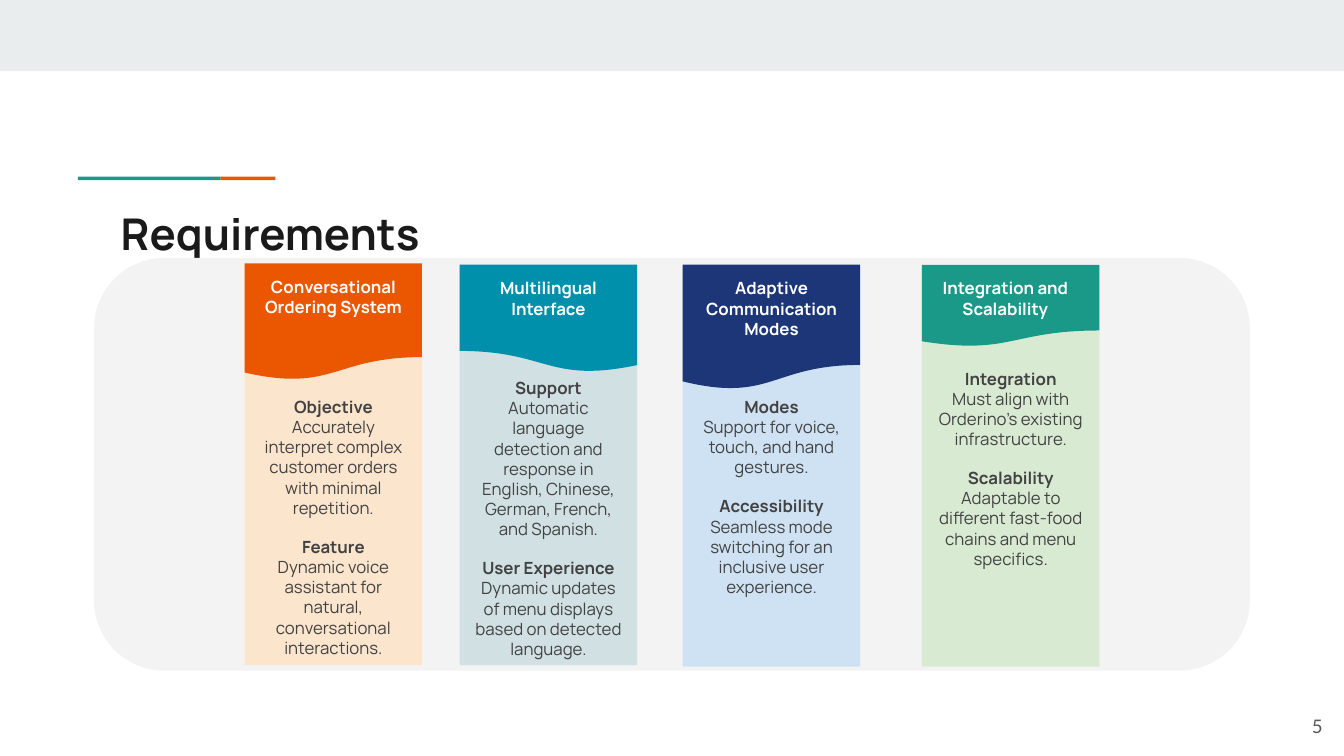
"""Build the Requirements slide: four wave-topped columns on a rounded panel."""
from dataclasses import dataclass

from pptx import Presentation
from pptx.dml.color import RGBColor
from pptx.enum.shapes import MSO_SHAPE
from pptx.enum.text import MSO_ANCHOR, PP_ALIGN
from pptx.util import Inches, Pt

RECTANGLE = MSO_SHAPE.RECTANGLE
ROUNDED = MSO_SHAPE.ROUNDED_RECTANGLE
WAVE = MSO_SHAPE.FLOWCHART_DOCUMENT
LEFT, CENTER, RIGHT = PP_ALIGN.LEFT, PP_ALIGN.CENTER, PP_ALIGN.RIGHT
TOP, MIDDLE = MSO_ANCHOR.TOP, MSO_ANCHOR.MIDDLE

GRID_COLUMNS, GRID_ROWS = 100, 56.25
UNIT = Inches(10) / GRID_COLUMNS
CARD_WIDTH, CARD_HEIGHT = 13.2, 29.8
LABEL_HEIGHT = 6.6
SECTION_GAP = 10

COLORS = {
    "banner": "E9EDEE", "panel": "F3F3F3", "title": "1A1A1A",
    "body": "424242", "number": "595959", "white": "FFFFFF",
    "orange": "EB5600", "peach": "FCE5CD",
    "cyan": "0090AC", "mist": "D0E0E3",
    "navy": "1C3678", "sky": "CFE2F3",
    "teal": "1A9988", "mint": "D9EAD3",
}


@dataclass(frozen=True)
class Area:
    """A rectangle in grid columns and rows."""
    left: float
    top: float
    width: float
    height: float

    def lengths(self) -> list[int]:
        """Return the four lengths in slide units."""
        return [round(UNIT * cells)
                for cells in (self.left, self.top, self.width, self.height)]


@dataclass(frozen=True)
class Style:
    """The look of a paragraph."""
    color: str
    size: float = 9
    bold: bool = False
    font: str = "Manrope"
    align: PP_ALIGN = CENTER


@dataclass(frozen=True)
class Section:
    """A heading with the sentence below it."""
    heading: str
    sentence: str


@dataclass(frozen=True)
class Card:
    """A requirement column with its wave header and sections."""
    label: str
    left: float
    top: float
    wave_top: float
    wave_height: float
    body_top: float
    dark: str
    light: str
    sections: tuple[Section, ...]
    label_width: float = CARD_WIDTH
    flipped: bool = False


HEADING = Style("body", bold=True)
SENTENCE = Style("body")
LABEL = Style("white", bold=True)
TITLE = Style("title", 23.4, True, align=LEFT)
NUMBER = Style("number", 10, font="Lato", align=RIGHT)

CARDS = (
    Card("Conversational Ordering System", 18.2, 19.7, 19.6, 8.7, 28.5,
         "orange", "peach", (
             Section("Objective", "Accurately interpret complex customer "
                     "orders with minimal repetition."),
             Section("Feature", "Dynamic voice assistant for natural, "
                     "conversational interactions."))),
    Card("Multilingual Interface", 34.2, 19.7, 19.7, 8, 27.1,
         "cyan", "mist", (
             Section("Support", "Automatic language detection and response "
                     "in English, Chinese, German, French, and Spanish."),
             Section("User Experience", "Dynamic updates of menu displays "
                     "based on detected language.")),
         flipped=True),
    Card("Adaptive Communication Modes", 50.8, 19.8, 19.7, 9.3, 28.5,
         "navy", "sky", (
             Section("Modes", "Support for voice, touch, and hand gestures."),
             Section("Accessibility", "Seamless mode switching for an "
                     "inclusive user experience."))),
    Card("Integration and Scalability", 68.6, 19.8, 19.7, 6.1, 26.4,
         "teal", "mint", (
             Section("Integration", "Must align with Orderino’s existing "
                     "infrastructure."),
             Section("Scalability", "Adaptable to different fast-food "
                     "chains and menu specifics.")),
         label_width=12.4),
)


def add_block(page, kind: MSO_SHAPE, area: Area, color: str):
    """Add a flat filled shape without outline."""
    block = page.shapes.add_shape(kind, *area.lengths())
    block.shadow.inherit = False
    block.fill.solid()
    block.fill.fore_color.rgb = RGBColor.from_string(COLORS[color])
    block.line.fill.background()
    return block


def add_frame(page, area: Area, anchor: MSO_ANCHOR = TOP):
    """Add a wrapping text box and return its text frame."""
    frame = page.shapes.add_textbox(*area.lengths()).text_frame
    frame.word_wrap = True
    frame.vertical_anchor = anchor
    frame.margin_left = frame.margin_right = Inches(0.1)
    frame.margin_top = frame.margin_bottom = Inches(0.1)
    return frame


def write(para, text: str, style: Style, gap: float = 0) -> None:
    """Fill a paragraph and format its text."""
    para.text = text
    para.alignment = style.align
    para.space_before = Pt(gap)
    for span in para.runs:
        span.font.name = style.font
        span.font.size = Pt(style.size)
        span.font.bold = style.bold
        span.font.color.rgb = RGBColor.from_string(COLORS[style.color])


def add_card(page, card: Card) -> None:
    """Draw one requirement column."""
    add_block(page, RECTANGLE,
              Area(card.left, card.top, CARD_WIDTH, CARD_HEIGHT), card.light)
    wave = add_block(
        page, WAVE,
        Area(card.left, card.wave_top, CARD_WIDTH, card.wave_height), card.dark)
    if card.flipped:
        wave._element.spPr.get_or_add_xfrm().set("flipH", "1")
    label = add_frame(
        page, Area(card.left, card.wave_top, card.label_width, LABEL_HEIGHT))
    write(label.paragraphs[0], card.label, LABEL)
    body = add_frame(page, Area(card.left, card.body_top, CARD_WIDTH,
                                GRID_ROWS - card.body_top - 6.7))
    for index, section in enumerate(card.sections):
        para = body.add_paragraph() if index else body.paragraphs[0]
        write(para, section.heading, HEADING, SECTION_GAP if index else 0)
        write(body.add_paragraph(), section.sentence, SENTENCE)


def main() -> None:
    """Create and save the deck."""
    deck = Presentation()
    deck.slide_width = round(UNIT * GRID_COLUMNS)
    deck.slide_height = round(UNIT * GRID_ROWS)
    page = deck.slides.add_slide(deck.slide_layouts[6])
    add_block(page, RECTANGLE, Area(0, 0, GRID_COLUMNS, 5.3), "banner")
    add_block(page, RECTANGLE, Area(16.4, 13.15, 4.1, 0.25), "orange")
    add_block(page, RECTANGLE, Area(5.8, 13.15, 10.6, 0.25), "teal")
    title = add_frame(page, Area(8, 14.4, 84.1, 5.9))
    write(title.paragraphs[0], "Requirements", TITLE)
    panel = add_block(page, ROUNDED, Area(7, 19.2, 86, 30.7), "panel")
    panel.adjustments[0] = 0.17
    for card in CARDS:
        add_card(page, card)
    number = add_frame(page, Area(93.4, 51.9, 6, 4.3), MIDDLE)
    write(number.paragraphs[0], "5", NUMBER)
    deck.save("out.pptx")


if __name__ == "__main__":
    main()
